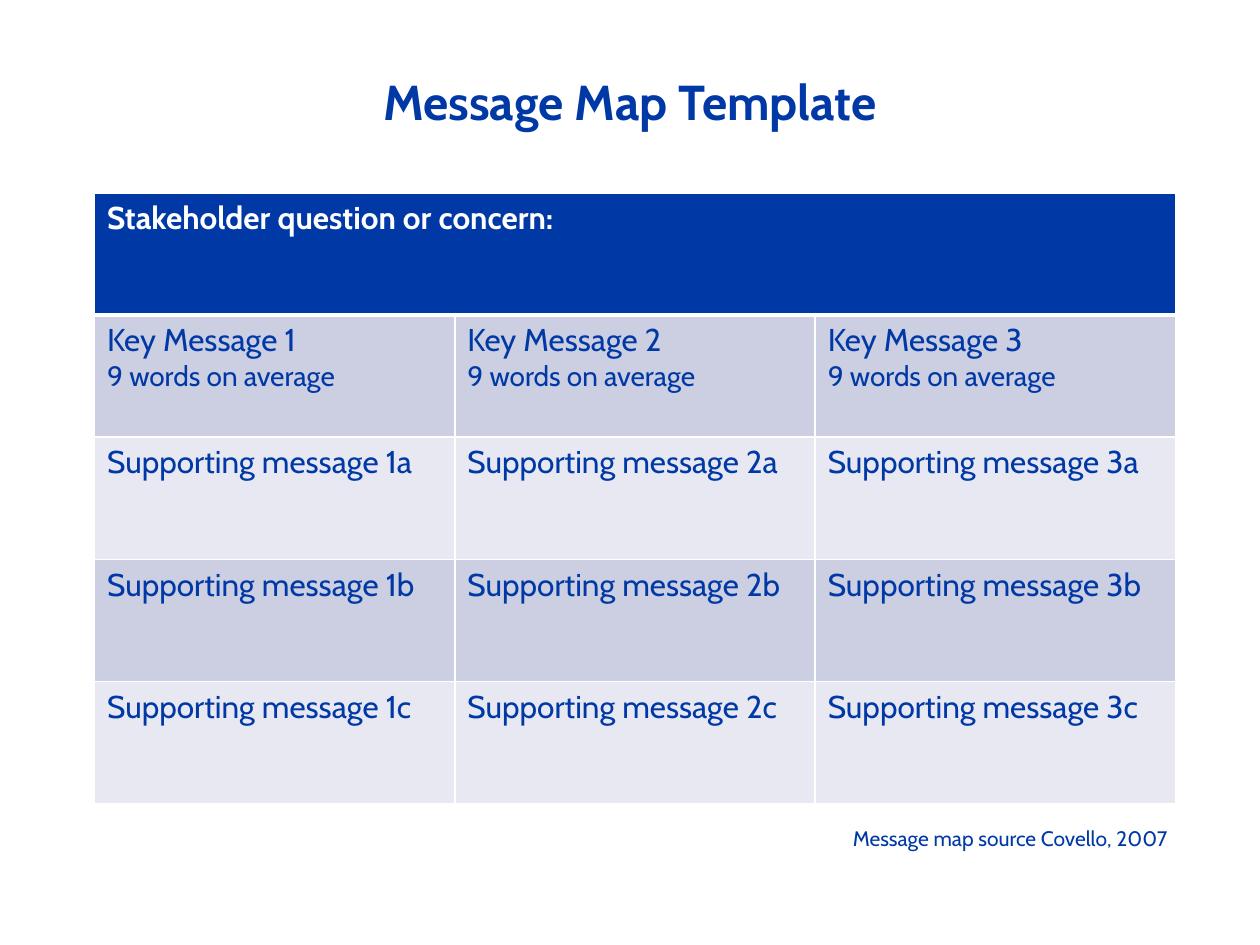
from dataclasses import dataclass

from lxml import etree
from pptx import Presentation
from pptx import util as u
from pptx.dml.color import RGBColor
from pptx.enum import text
from pptx.oxml import ns

COLORS = {"blue": "0039A6", "white": "FFFFFF", "band": "CCCEE1", "pale": "E7E8F1"}
FONT = "Cabin"
COLUMNS, ROWS = 3, 5
COLUMN_WIDTH, ROW_HEIGHT = 2.86, 0.97


@dataclass
class Line:
    words: str
    size: int = 18
    color: str = "blue"
    bold: bool = False


@dataclass
class Caption:
    line: Line
    box: tuple[float, float, float, float]
    frame_format: dict
    paragraph_format: dict


def apply(target, values: dict) -> None:
    for name, value in values.items():
        setattr(target, name, value)


def write(frame, lines: list[Line]) -> None:
    for index, line in enumerate(lines):
        paragraph = frame.add_paragraph() if index else frame.paragraphs[0]
        run = paragraph.add_run()
        run.text = line.words
        apply(run.font, {"name": FONT, "size": u.Pt(line.size), "bold": line.bold})
        run.font.color.rgb = RGBColor.from_string(COLORS[line.color])


def add_caption(slide, caption: Caption) -> None:
    frame = slide.shapes.add_textbox(*map(u.Inches, caption.box)).text_frame
    apply(frame, {"word_wrap": True, **caption.frame_format})
    write(frame, [caption.line])
    apply(frame.paragraphs[0], caption.paragraph_format)


def add_borders(cell, top: int = 1, bottom: int = 1) -> None:
    properties = cell._tc.get_or_add_tcPr()
    for side, points in {"L": 1, "R": 1, "T": top, "B": bottom}.items():
        border = etree.SubElement(properties, ns.qn(f"a:ln{side}"), w=str(u.Pt(points)))
        fill = etree.SubElement(border, ns.qn("a:solidFill"))
        etree.SubElement(fill, ns.qn("a:srgbClr"), val=COLORS["white"])


def fill_cell(cell, lines: list[Line], color: str) -> None:
    cell.fill.solid()
    cell.fill.fore_color.rgb = RGBColor.from_string(COLORS[color])
    write(cell.text_frame, lines)


def add_message_map(slide) -> None:
    message_map = slide.shapes.add_table(
        ROWS, COLUMNS, u.Inches(0.75), u.Inches(1.53),
        u.Inches(COLUMN_WIDTH * COLUMNS), u.Inches(ROW_HEIGHT * ROWS)).table
    for column in message_map.columns:
        column.width = u.Inches(COLUMN_WIDTH)
    for row in message_map.rows:
        row.height = u.Inches(ROW_HEIGHT)

    # Stakeholder question across all columns, with a heavier rule below
    question = message_map.cell(0, 0)
    question.merge(message_map.cell(0, COLUMNS - 1))
    for column in range(COLUMNS):
        add_borders(message_map.cell(0, column), bottom=3)
    fill_cell(question, [Line("Stakeholder question or concern:", color="white", bold=True)], "blue")

    # One key message per column, with its supporting messages below
    for column in range(COLUMNS):
        number = column + 1
        messages = [[Line(f"Key Message {number}"), Line("9 words on average", size=16)]]
        messages += [[Line(f"Supporting message {number}{letter}")] for letter in "abc"]
        for row, lines in enumerate(messages, start=1):
            cell = message_map.cell(row, column)
            add_borders(cell, top=3 if row == 1 else 1)
            fill_cell(cell, lines, "band" if row % 2 else "pale")


def main() -> None:
    deck = Presentation()
    apply(deck, {"slide_width": u.Inches(10), "slide_height": u.Inches(7.5)})
    slide = deck.slides.add_slide(deck.slide_layouts[6])

    # Title
    add_caption(slide, Caption(
        Line("Message Map Template", size=28, bold=True), (0.5, 0.3, 9, 0.78),
        {"vertical_anchor": text.MSO_ANCHOR.BOTTOM},
        {"alignment": text.PP_ALIGN.CENTER, "line_spacing": u.Pt(30)}))

    add_message_map(slide)

    # Source note
    add_caption(slide, Caption(
        Line("Message map source Covello, 2007", size=12), (6.67, 6.5, 2.83, 0.3),
        {"auto_size": text.MSO_AUTO_SIZE.SHAPE_TO_FIT_TEXT}, {}))

    deck.save("out.pptx")


if __name__ == "__main__":
    main()
